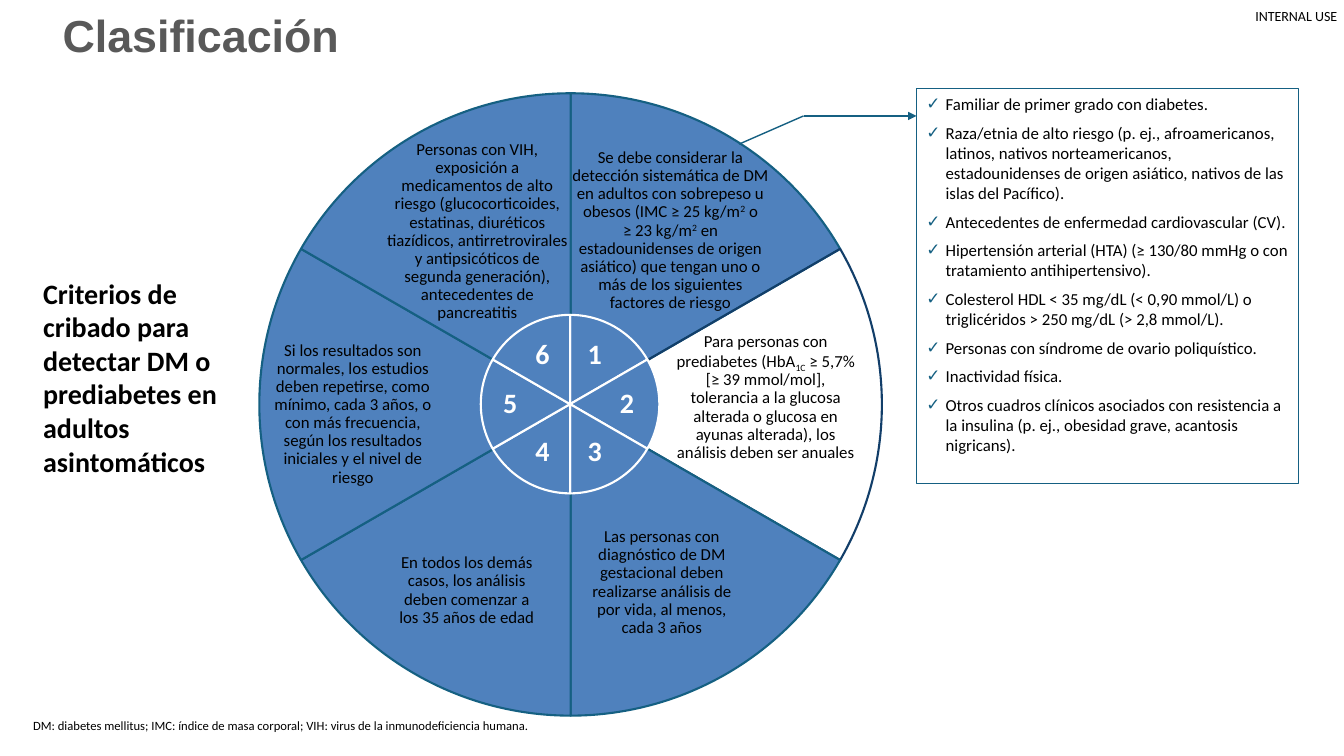
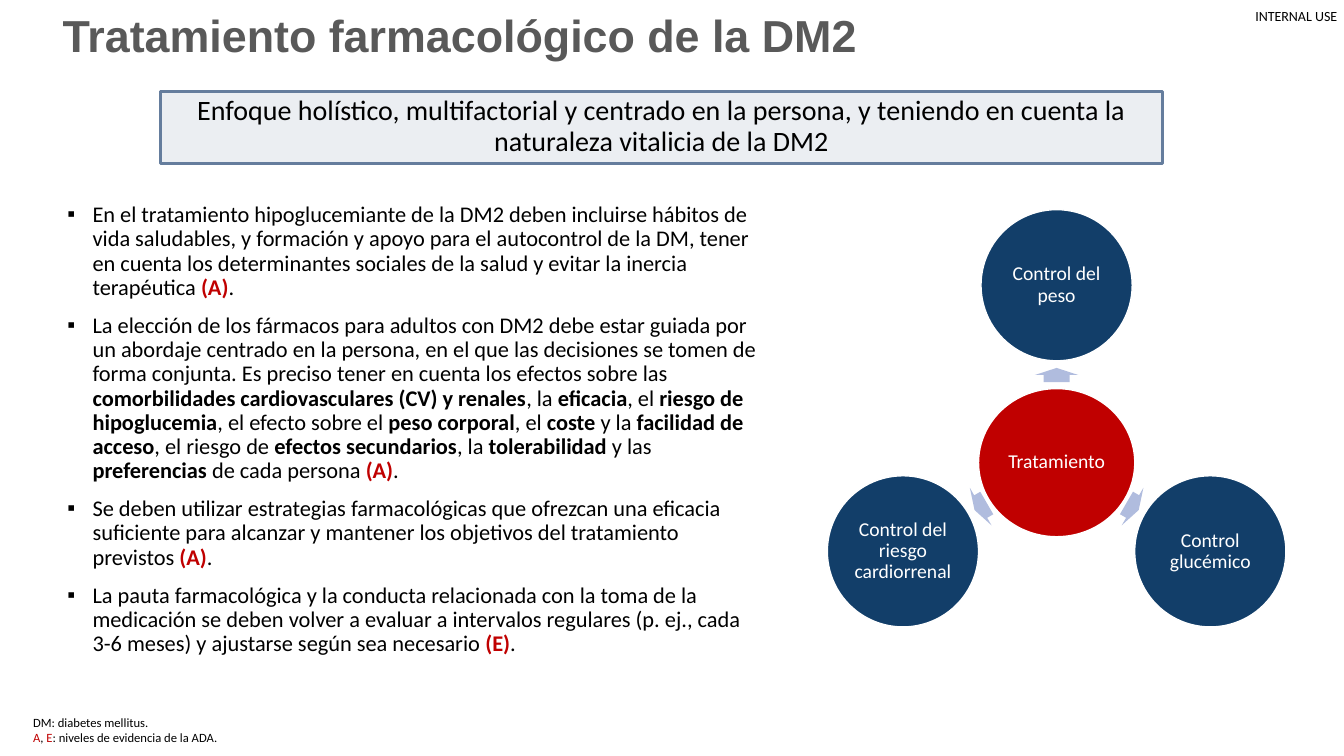
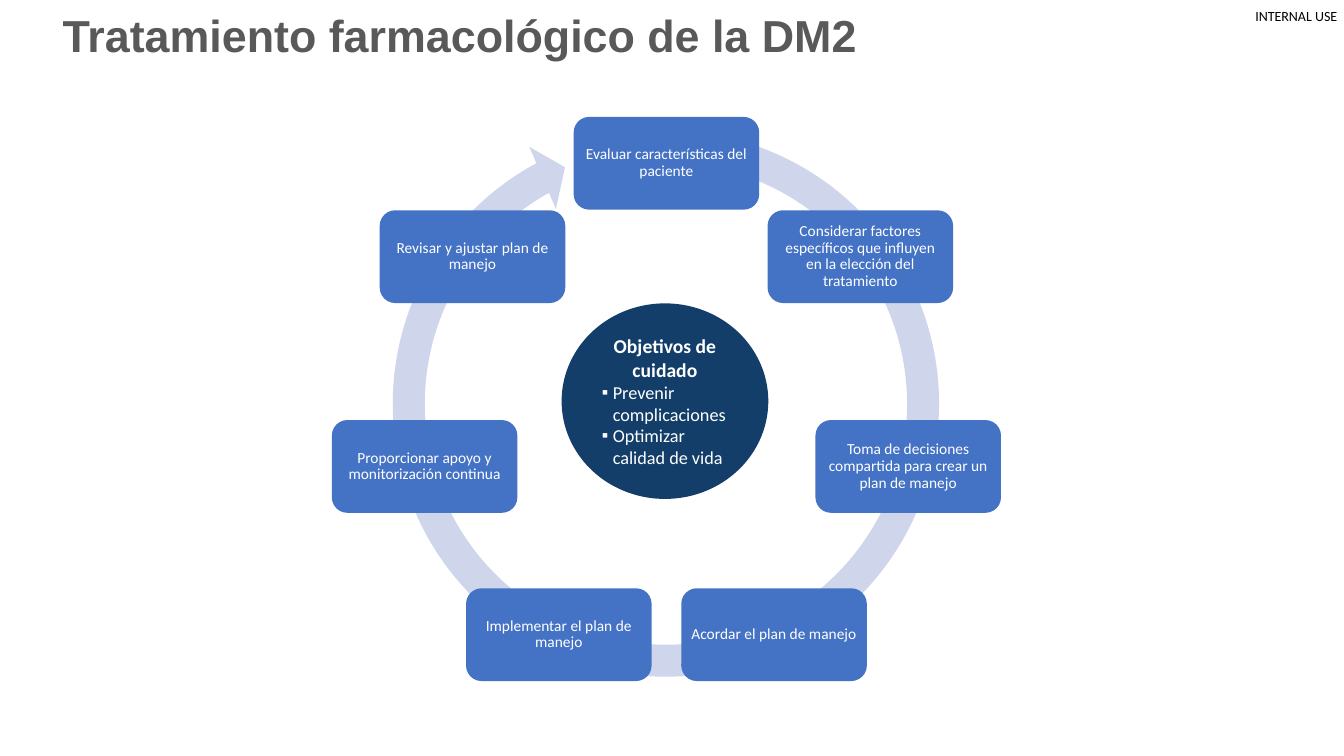
from math import cos, radians, sin

from lxml import etree
from pptx import Presentation
from pptx.chart.data import CategoryChartData
from pptx.dml.color import RGBColor
from pptx.enum.chart import XL_CHART_TYPE
from pptx.enum.shapes import MSO_CONNECTOR, MSO_SHAPE
from pptx.enum.text import MSO_ANCHOR, MSO_AUTO_SIZE, PP_ALIGN
from pptx.oxml import parse_xml
from pptx.oxml.ns import nsdecls, qn
from pptx.util import Inches, Pt

BLACK = RGBColor(0x00, 0x00, 0x00)
WHITE = RGBColor(0xFF, 0xFF, 0xFF)
GREY = RGBColor(0x59, 0x59, 0x59)
TEAL = RGBColor(0x15, 0x60, 0x82)
NAVY = RGBColor(0x12, 0x3E, 0x69)
RED = RGBColor(0xC0, 0x00, 0x00)
LILAC = RGBColor(0xB0, 0xBC, 0xDE)
PALE = RGBColor(0xCF, 0xD5, 0xEA)
BLUE = RGBColor(0x44, 0x72, 0xC4)
MIST = RGBColor(0xEB, 0xEE, 0xF2)
STEEL = RGBColor(0x65, 0x7D, 0x9D)

PIE = XL_CHART_TYPE.PIE
STRAIGHT = MSO_CONNECTOR.STRAIGHT
RECT = MSO_SHAPE.RECTANGLE
ROUND = MSO_SHAPE.ROUNDED_RECTANGLE
OVAL = MSO_SHAPE.OVAL
ARROW = MSO_SHAPE.RIGHT_ARROW
RING = MSO_SHAPE.CIRCULAR_ARROW
TOP = MSO_ANCHOR.TOP
MIDDLE = MSO_ANCHOR.MIDDLE
LEFT = PP_ALIGN.LEFT
CENTER = PP_ALIGN.CENTER
FIXED = MSO_AUTO_SIZE.NONE

FLUSH = {"alignment": LEFT}
TIGHT = {"alignment": CENTER, "line_spacing": 0.9}
GRADE = {"color": RED, "bold": True}
STRONG = {"bold": True}
TINT = {"color": RED}
SUPER = {"baseline": "30000"}
SUB = {"baseline": "-25000"}

WEDGES = [
    ((5.56, 1.43, 2.18, 1.74),
     ["Se debe considerar la detección sistemática de DM en adultos con sobrepeso u "
      "obesos (IMC ≥ 25 kg/m", ("2", SUPER), " o\n≥ 23 kg/m", ("2", SUPER),
      " en estadounidenses de origen asiático) que tengan uno o más de los "
      "siguientes factores de riesgo"]),
    ((6.56, 3.25, 2.07, 1.37),
     ["Para personas con prediabetes (HbA", ("1C", SUB),
      " ≥ 5,7% [≥ 39 mmol/mol], tolerancia a la glucosa alterada o glucosa en "
      "ayunas alterada), los análisis deben ser anuales"]),
    ((5.68, 5.19, 1.77, 1.19),
     ["Las personas con diagnóstico de DM gestacional deben realizarse análisis de "
      "por vida, al menos, cada 3 años"]),
    ((3.8, 5.45, 1.66, 0.83),
     ["En todos los demás casos, los análisis deben comenzar a los 35 años de edad"]),
    ((2.59, 3.34, 1.82, 1.74),
     ["Si los resultados son normales, los estudios deben repetirse, como mínimo, "
      "cada 3 años, o con más frecuencia, según los resultados iniciales y el nivel "
      "de riesgo"]),
    ((3.73, 1.35, 2.01, 1.92),
     ["Personas con VIH, exposición a medicamentos de alto riesgo (glucocorticoides, "
      "estatinas, diuréticos tiazídicos, antirretrovirales y antipsicóticos de "
      "segunda generación), antecedentes de pancreatitis"]),
]

RISKS = [
    "Familiar de primer grado con diabetes.",
    "Raza/etnia de alto riesgo (p. ej., afroamericanos, latinos, nativos "
    "norteamericanos, estadounidenses de origen asiático, nativos de las islas del "
    "Pacífico).",
    "Antecedentes de enfermedad cardiovascular (CV).",
    "Hipertensión arterial (HTA) (≥ 130/80 mmHg o con tratamiento antihipertensivo).",
    "Colesterol HDL < 35 mg/dL (< 0,90 mmol/L) o triglicéridos > 250 mg/dL "
    "(> 2,8 mmol/L).",
    "Personas con síndrome de ovario poliquístico.",
    "Inactividad física.",
    "Otros cuadros clínicos asociados con resistencia a la insulina (p. ej., obesidad "
    "grave, acantosis nigricans).",
]

ADVICE = [
    ["En el tratamiento hipoglucemiante de la DM2 deben incluirse hábitos de vida "
     "saludables, y formación y apoyo para el autocontrol de la DM, tener en cuenta "
     "los determinantes sociales de la salud y evitar la inercia terapéutica ",
     ("(A)", GRADE), "."],
    ["La elección de los fármacos para adultos con DM2 debe estar guiada por un "
     "abordaje centrado en la persona, en el que las decisiones se tomen de forma "
     "conjunta. Es preciso tener en cuenta los efectos sobre las ",
     ("comorbilidades cardiovasculares (CV) y renales", STRONG), ", la ",
     ("eficacia", STRONG), ", el ", ("riesgo de hipoglucemia", STRONG),
     ", el efecto sobre el ", ("peso corporal", STRONG), ", el ",
     ("coste", STRONG), " y la ", ("facilidad de acceso", STRONG),
     ", el riesgo de ", ("efectos secundarios", STRONG), ", la ",
     ("tolerabilidad", STRONG), " y las ", ("preferencias", STRONG),
     " de cada persona ", ("(A)", GRADE), "."],
    ["Se deben utilizar estrategias farmacológicas que ofrezcan una eficacia "
     "suficiente para alcanzar y mantener los objetivos del tratamiento previstos ",
     ("(A)", GRADE), "."],
    ["La pauta farmacológica y la conducta relacionada con la toma de la medicación "
     "se deben volver a evaluar a intervalos regulares (p. ej., cada 3-6 meses) y "
     "ajustarse según sea necesario ", ("(E)", GRADE), "."],
]

GOALS = ["Control del peso", "Control glucémico", "Control del riesgo cardiorrenal"]

STEPS = [
    "Evaluar características del paciente",
    "Considerar factores específicos que influyen en la elección del tratamiento",
    "Toma de decisiones compartida para crear un plan de manejo",
    "Acordar el plan de manejo",
    "Implementar el plan de manejo",
    "Proporcionar apoyo y monitorización continua",
    "Revisar y ajustar plan de manejo",
]


def box(*at):
    return [Inches(v) for v in at]


def around(x, y, wide, high):
    return x - wide / 2, y - high / 2, wide, high


def polar(mid, reach, angle):
    turn = radians(angle)
    return mid[0] + reach * cos(turn), mid[1] + reach * sin(turn)


def add_run(para, words, form):
    run = para.add_run()
    run.text = words
    for key, value in form.items():
        if key == "color":
            run.font.color.rgb = value
        elif key == "baseline":
            run._r.get_or_add_rPr().set(key, value)
        else:
            setattr(run.font, key, value)


def add_mark(para, mark, indent, color):
    props = para._p.get_or_add_pPr()
    props.set("marL", str(Inches(indent)))
    props.set("indent", str(-Inches(indent)))
    for xml in (f'<a:buClr {nsdecls("a")}><a:srgbClr val="{color}"/></a:buClr>',
                f'<a:buFont {nsdecls("a")} typeface="Arial"/>',
                f'<a:buChar {nsdecls("a")} char="{mark}"/>'):
        props.append(parse_xml(xml))


def write(frame, paras, size, form=FLUSH, mark=None, **font):
    base = {"name": "Calibri", "size": Pt(size), "color": BLACK, **font}
    for parts in paras:
        first = not frame.text
        para = frame.paragraphs[0] if first else frame.add_paragraph()
        for key, value in form.items():
            if not (first and key == "space_before"):
                setattr(para, key, value)
        if mark:
            add_mark(para, *mark)
        for part in [parts] if isinstance(parts, str) else parts:
            words, extra = (part, {}) if isinstance(part, str) else part
            for row, line in enumerate(words.split("\n")):
                if row:
                    para.add_line_break()
                add_run(para, line, {**base, **extra})


def set_frame(frame, anchor=TOP, pad=None):
    form = {"word_wrap": True, "auto_size": FIXED, "vertical_anchor": anchor}
    if pad is not None:
        sides = ("left", "top", "right", "bottom")
        form.update({f"margin_{side}": Inches(pad) for side in sides})
    for key, value in form.items():
        setattr(frame, key, value)


def add_text(slide, at, paras, size, form=FLUSH, anchor=TOP, pad=None, **rest):
    frame = slide.shapes.add_textbox(*box(*at)).text_frame
    set_frame(frame, anchor, pad)
    write(frame, paras, size, form, **rest)


def add_form(slide, kind, at, fill=None, line=None, width=1, anchor=MIDDLE,
             pad=None, turn=0, adjust=()):
    shape = slide.shapes.add_shape(kind, *box(*at))
    shape.shadow.inherit = False
    shape.rotation = turn
    for index, value in enumerate(adjust):
        shape.adjustments[index] = value
    if fill is None:
        shape.fill.background()
    else:
        shape.fill.solid()
        shape.fill.fore_color.rgb = fill
    if line is None:
        shape.line.fill.background()
    else:
        shape.line.color.rgb = line
        shape.line.width = Pt(width)
    set_frame(shape.text_frame, anchor, pad)
    return shape


def add_line(slide, start, end, head=False):
    line = slide.shapes.add_connector(STRAIGHT, *box(*start, *end))
    line.line.color.rgb = TEAL
    line.line.width = Pt(1)
    if head:
        tip = etree.SubElement(line.line._get_or_add_ln(), qn("a:tailEnd"))
        tip.set("type", "triangle")
    etree.SubElement(line._element.spPr, qn("a:effectLst"))


def paint(part, fill, line):
    if fill is None:
        part.format.fill.background()
    else:
        part.format.fill.solid()
        part.format.fill.fore_color.rgb = fill
    part.format.line.color.rgb = line
    part.format.line.width = Pt(1.5)


def add_pie(slide, at, plot, fill, line):
    data = CategoryChartData()
    data.categories = [str(n) for n in range(1, 7)]
    data.add_series("Series 1", [17] * 6)
    chart = slide.shapes.add_chart(PIE, *box(*at), data).chart
    chart.has_legend = False
    chart.has_title = False
    font = chart.font
    font.name, font.size, font.color.rgb = "Calibri", Pt(10), BLACK
    area = chart.plots[0]
    area.vary_by_categories = False
    paint(area.series[0], fill, line)
    tree = chart._chartSpace.chart.plotArea
    for old in tree.findall(qn("c:layout")):
        tree.remove(old)
    spots = "".join(f'<c:{key} val="{value}"/>' for key, value in zip("xywh", plot))
    modes = '<c:xMode val="edge"/><c:yMode val="edge"/>'
    tree.insert(0, parse_xml(
        f'<c:layout {nsdecls("c")}><c:manualLayout><c:layoutTarget val="inner"/>'
        f'{modes}{spots}</c:manualLayout></c:layout>'))
    return area.series[0]


def start(deck, title):
    slide = deck.slides.add_slide(deck.slide_layouts[5])
    head = slide.shapes.title
    head.left, head.top, head.width, head.height = box(0.52, -0.39, 11.54, 1.54)
    set_frame(head.text_frame, MIDDLE)
    write(head.text_frame, [title], 32, {**FLUSH, "line_spacing": 0.9},
          name="Arial", color=GREY, bold=True)
    add_text(slide, (12.45, 0.07, 0.88, 0.17), ["INTERNAL USE"], 10, pad=0)
    return slide


def add_wheel(deck):
    slide = start(deck, "Clasificación")
    add_text(slide, (0.33, 2.69, 1.97, 2.12),
             ["Criterios de cribado para detectar DM o prediabetes en adultos "
              "asintomáticos"], 20, bold=True)
    outer = add_pie(slide, (1.66, 0.77, 8, 6.48), (0.114, 0.024, 0.772, 0.953),
                    None, TEAL)
    paint(outer.points[1], None, NAVY)
    add_pie(slide, (4.4, 2.98, 2.51, 2.06), (0.147, 0.07, 0.706, 0.86), NAVY, WHITE)
    for at, parts in WEDGES:
        add_text(slide, at, [parts], 12, TIGHT)
    right = [(0.26, -0.48), (0.58, 0), (0.26, 0.48)]
    spots = right + [(-x, -y) for x, y in right]
    for number, (x, y) in enumerate(spots, 1):
        add_text(slide, around(5.64 + x, 4.01 + y, 0.36, 0.41), [str(number)], 20,
                 TIGHT, MIDDLE, 0, color=WHITE, bold=True)
    panel = add_form(slide, RECT, (9.09, 0.88, 3.79, 3.92), None, TEAL, 0.75, TOP)
    write(panel.text_frame, RISKS, 12, {**FLUSH, "space_after": Pt(6)},
          ("✓", 0.19, TEAL))
    add_line(slide, (7.33, 1.43), (7.97, 1.15))
    add_line(slide, (7.97, 1.15), (9.09, 1.15), True)
    add_text(slide, (0.23, 7.07, 10.88, 0.25),
             ["DM: diabetes mellitus; IMC: índice de masa corporal; VIH: virus de la "
              "inmunodeficiencia humana."], 9)


def add_care(deck):
    slide = start(deck, "Tratamiento farmacológico de la DM2")
    add_text(slide, (0.57, 1.97, 7.06, 4.76), ADVICE, 16,
             {**FLUSH, "line_spacing": 0.9, "space_before": Pt(10)},
             mark=("▪", 0.25, BLACK))
    mid = (10.48, 4.59)
    hub = add_form(slide, OVAL, around(*mid, 1.55, 1.47), RED, WHITE, pad=0.02)
    write(hub.text_frame, ["Tratamiento"], 14, TIGHT, color=WHITE)
    for index, goal in enumerate(GOALS):
        angle = 120 * index - 90
        add_form(slide, ARROW, around(*polar(mid, 0.87, angle), 0.14, 0.43), LILAC,
                 turn=angle, adjust=(0.6, 0.5))
        disc = add_form(slide, OVAL, around(*polar(mid, 1.76, angle), 1.5, 1.5),
                        NAVY, WHITE, pad=0.02)
        write(disc.text_frame, [goal], 14, TIGHT, color=WHITE)
    banner = add_form(slide, RECT, (1.59, 0.91, 9.94, 0.71), MIST, STEEL, 2.25, TOP)
    write(banner.text_frame,
          ["Enfoque holístico, multifactorial y centrado en la persona, y teniendo en "
           "cuenta la naturaleza vitalicia de la DM2"], 20, TIGHT)
    add_text(slide, (0.23, 7.04, 10.69, 0.4),
             ["DM: diabetes mellitus.",
              [("A", TINT), ",", (" E", TINT), ": niveles de evidencia de la ADA."]], 9)


def add_cycle(deck):
    slide = start(deck, "Tratamiento farmacológico de la DM2")
    add_form(slide, RING, (3.72, 1.12, 5.77, 5.77), PALE,
             adjust=(0.055, 3.307, 144.822, 169.695, 0.058))
    for index, step in enumerate(STEPS):
        spot = polar((6.61, 4.08), 2.46, 360 / len(STEPS) * index - 90)
        card = add_form(slide, ROUND, around(*spot, 1.84, 0.92), BLUE, pad=0.05)
        write(card.text_frame, [step], 11, TIGHT, color=WHITE)
    core = add_form(slide, OVAL, (5.57, 3.01, 2.05, 1.94), NAVY).text_frame
    write(core, ["Objetivos de cuidado"], 14, {"alignment": CENTER},
          color=WHITE, bold=True)
    write(core, ["Prevenir complicaciones", "Optimizar calidad de vida"], 13,
          mark=("▪", 0.11, WHITE), color=WHITE)


def main():
    deck = Presentation()
    deck.slide_width, deck.slide_height = box(13.33, 7.5)
    add_wheel(deck)
    add_care(deck)
    add_cycle(deck)
    deck.save("out.pptx")


if __name__ == "__main__":
    main()
